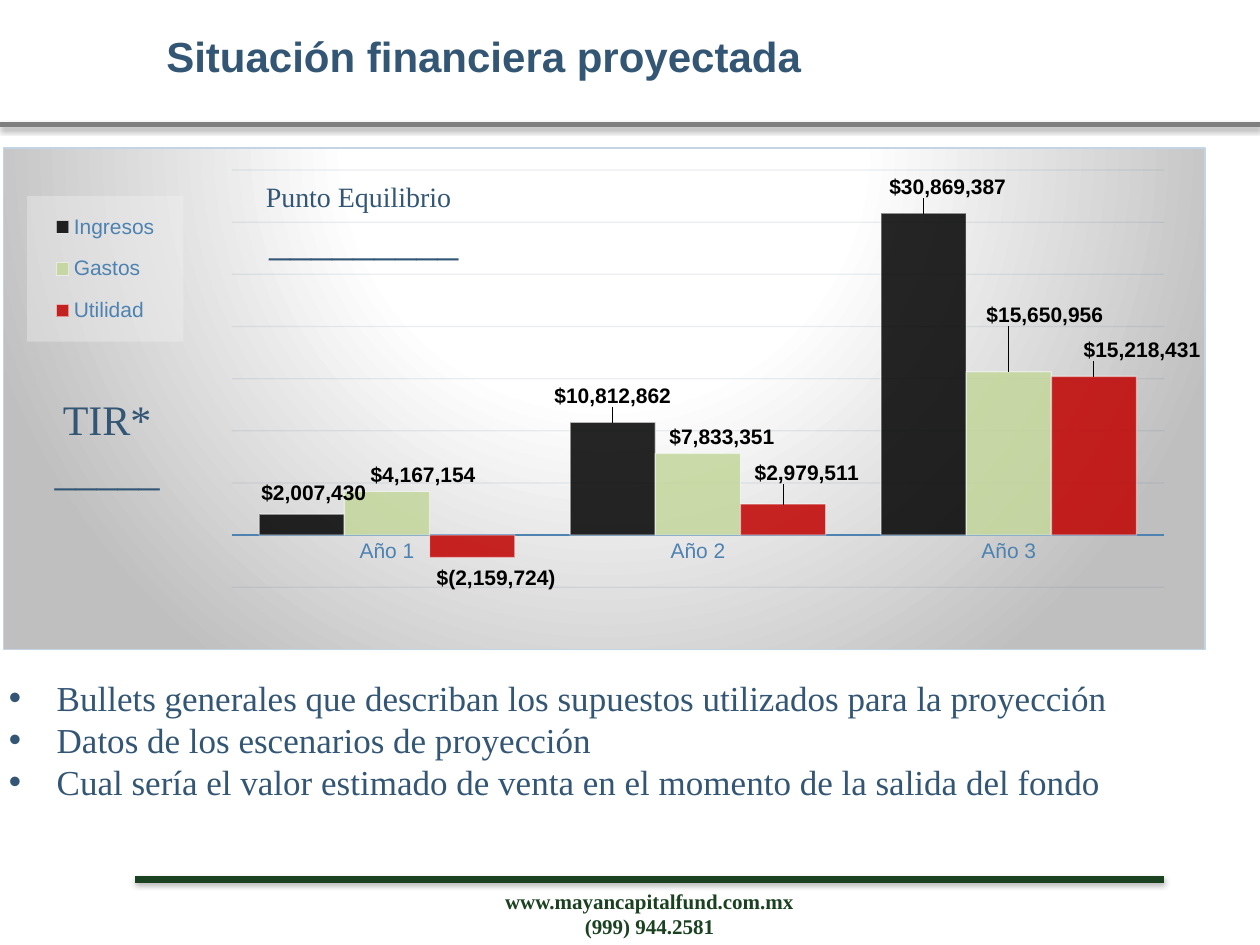
from pptx import Presentation
from pptx.chart.data import CategoryChartData
from pptx.dml.color import RGBColor
from pptx.enum.chart import XL_CHART_TYPE, XL_LABEL_POSITION, XL_LEGEND_POSITION, XL_TICK_MARK
from pptx.enum.shapes import MSO_CONNECTOR
from pptx.enum.text import MSO_ANCHOR, PP_ALIGN
from pptx.oxml import parse_xml
from pptx.oxml.ns import nsdecls
from pptx.util import Inches, Pt

THEME = {
    "ink": "335675", "axis": "4D82B1", "grid": "385F81", "border": "C3D5E5",
    "rule": "7F7F7F", "green": "1A4221", "black": "000000", "white": "FFFFFF",
    "sans": "Arial", "serif": "Times New Roman",
    "large": 24, "body": 20, "note": 16, "small": 12,
}
MONEY = '"$"#,##0;"$"\\(#,##0\\)'

deck = Presentation()
deck.slide_width, deck.slide_height = Inches(10), Inches(7.5)
column, row = deck.slide_width / 100, deck.slide_height / 75
page = deck.slides.add_slide(deck.slide_layouts[1])


def grid(left, top, width, height):
    return [int(left * column), int(top * row), int(width * column), int(height * row)]


def style(font, size, color, face, bold=False):
    font.size, font.bold, font.name = Pt(THEME[size]), bold, THEME[face]
    font.color.rgb = RGBColor.from_string(THEME[color])


for left, right, height, color, weight, opacity in [
    (0, 100, 9.9, "rule", 3, 38),
    (10.7, 92.4, 69.8, "green", 3.5, 35),
]:
    x, y, end, _ = grid(left, height, right, 0)
    rule = page.shapes.add_connector(MSO_CONNECTOR.STRAIGHT, x, y, end, y)
    rule.line.color.rgb = RGBColor.from_string(THEME[color])
    rule.line.width = Pt(weight)
    rule._element.spPr.append(parse_xml(
        f'<a:effectLst {nsdecls("a")}><a:outerShdw blurRad="{Pt(3.1)}" dist="{Pt(1.7)}" '
        f'dir="5400000" rotWithShape="0"><a:srgbClr val="{THEME["black"]}">'
        f'<a:alpha val="{opacity * 1000}"/></a:srgbClr></a:outerShdw></a:effectLst>'))

series_table = [
    ("Ingresos", "000000", (2007430, 10812862, 30869387),
     [(0.01, -0.01), (0, -0.02), (0.02, -0.02)]),
    ("Gastos", "C3D69B", (4167154, 7833351, 15650956),
     [(0.03, 0), (0.02, 0), (0.03, -0.08)]),
    ("Utilidad", "C00000", (-2159724, 2979511, 15218431),
     [(0.02, 0.01), (0.02, -0.03), (0.04, -0.02)]),
]
data = CategoryChartData(number_format=MONEY)
data.categories = ["Año 1", "Año 2", "Año 3"]
for name, _, values, _ in series_table:
    data.add_series(name, values)
chart = page.shapes.add_chart(
    XL_CHART_TYPE.COLUMN_CLUSTERED, *grid(0.2, 11.7, 95.5, 39.9), data).chart
chart.has_title = False
style(chart.font, "small", "ink", "sans")

plot = chart.plots[0]
plot.gap_width, plot.overlap, plot.vary_by_categories = 65, 0, False
for series, (_, color, _, offsets) in zip(plot.series, series_table):
    series.invert_if_negative = False
    series.format.fill.solid()
    series.format.fill.fore_color.rgb = RGBColor.from_string(color)
    series.format.line.color.rgb = RGBColor.from_string(THEME["white"])
    series.format.line.width = Pt(0.75)
    for tint, opacity in zip(series._element.xpath("c:spPr//a:srgbClr"), (85, 50)):
        tint.append(parse_xml(f'<a:alpha {nsdecls("a")} val="{opacity * 1000}"/>'))
    labels = series.data_labels
    labels.show_value = True
    labels.number_format, labels.number_format_is_linked = MONEY, False
    labels.position = XL_LABEL_POSITION.OUTSIDE_END
    style(labels.font, "small", "black", "sans", True)
    for index, (across, down) in enumerate(offsets):
        label = series.points[index].data_label
        label.position = XL_LABEL_POSITION.OUTSIDE_END
        style(label.font, "small", "black", "sans", True)
        anchor = series._element.xpath(f"c:dLbls/c:dLbl/c:idx[@val='{index}']")[0]
        number = parse_xml(f'<c:numFmt {nsdecls("c")} sourceLinked="0"/>')
        number.set("formatCode", MONEY)
        anchor.addnext(number)
        anchor.addnext(parse_xml(
            f'<c:layout {nsdecls("c")}><c:manualLayout><c:x val="{across}"/>'
            f'<c:y val="{down}"/></c:manualLayout></c:layout>'))

years = chart.category_axis
years.major_tick_mark = XL_TICK_MARK.NONE
years.format.line.color.rgb = RGBColor.from_string(THEME["axis"])
years.format.line.width = Pt(1.5)
style(years.tick_labels.font, "small", "axis", "sans")

amounts = chart.value_axis
amounts.minimum_scale, amounts.maximum_scale, amounts.major_unit = -5e6, 35e6, 5e6
amounts.has_major_gridlines = True
lines = amounts.major_gridlines.format.line
lines.color.rgb = RGBColor.from_string(THEME["grid"])
lines.width = Pt(0.75)
for tint in amounts._element.xpath("c:majorGridlines//a:srgbClr"):
    tint.append(parse_xml(f'<a:alpha {nsdecls("a")} val="10000"/>'))
amounts.visible = False

chart.has_legend = True
legend = chart.legend
legend.position, legend.include_in_layout = XL_LEGEND_POSITION.BOTTOM, False
style(legend.font, "small", "axis", "sans")
legend._element.xpath("c:txPr")[0].addprevious(parse_xml(
    f'<c:spPr {nsdecls("c", "a")}><a:solidFill><a:srgbClr val="F2F2F2">'
    '<a:alpha val="39000"/></a:srgbClr></a:solidFill></c:spPr>'))

for part, inner, frame in [
    (plot._element.getparent(), '<c:layoutTarget val="inner"/>', (0.19, 0.044, 0.776, 0.832)),
    (legend._element, "", (0.02, 0.096, 0.13, 0.29)),
]:
    for old in part.xpath("c:layout"):
        part.remove(old)
    sizes = "".join(f'<c:{key} val="{share}"/>' for key, share in zip("xywh", frame))
    layout = parse_xml(
        f'<c:layout {nsdecls("c")}><c:manualLayout>{inner}<c:xMode val="edge"/>'
        f'<c:yMode val="edge"/>{sizes}</c:manualLayout></c:layout>')
    if inner:
        part.insert(0, layout)
    else:
        part.xpath("c:legendPos")[0].addnext(layout)

stops = "".join(f'<a:gs pos="{place}000"><a:srgbClr val="{color}"/></a:gs>'
                for place, color in [(0, "FFFFFF"), (39, "FFFFFF"), (100, "BFBFBF")])
chart._chartSpace.xpath("c:chart")[0].addnext(parse_xml(
    f'<c:spPr {nsdecls("c", "a")}><a:gradFill><a:gsLst>{stops}</a:gsLst><a:path path="circle">'
    '<a:fillToRect l="50000" t="-80000" r="50000" b="180000"/></a:path></a:gradFill>'
    f'<a:ln w="{Pt(0.75)}"><a:solidFill><a:srgbClr val="{THEME["border"]}"/></a:solidFill>'
    '</a:ln></c:spPr>'))

title = page.shapes.title
title.left, title.top, title.width, title.height = grid(12.2, 1.9, 66.4, 5)
title.text_frame.text = "Situación financiera proyectada"
title.text_frame.vertical_anchor = MSO_ANCHOR.MIDDLE
title.text_frame.paragraphs[0].alignment = PP_ALIGN.LEFT
style(title.text_frame.paragraphs[0].runs[0].font, "large", "ink", "sans", True)

body = page.placeholders[1]
body.left, body.top, body.width, body.height = grid(-0.3, 53.2, 90.5, 11.1)
body.text_frame.text = "\n".join([
    "Bullets generales que describan los supuestos utilizados para la proyección",
    "Datos de los escenarios de proyección",
    "Cual sería el valor estimado de venta en el momento de la salida del fondo",
])
for paragraph in body.text_frame.paragraphs:
    properties = paragraph._p.get_or_add_pPr()
    properties.set("marL", str(Inches(0.38)))
    properties.set("indent", str(-Inches(0.38)))
    properties.append(parse_xml(f'<a:buFont {nsdecls("a")} typeface="Arial"/>'))
    properties.append(parse_xml(f'<a:buChar {nsdecls("a")} char="•"/>'))
    paragraph.space_before = Pt(0)
    style(paragraph.runs[0].font, "body", "ink", "serif")

for place, wrap, color, bold, content in [
    ((18.5, 13.8, 19.9, 7.7), True, "ink", False,
     [("Punto Equilibrio", "note"), (" _________", "large")]),
    ((3.3, 30.7, 10.4, 9.1), False, "ink", False, [("TIR*", "large"), ("_____", "large")]),
    ((39, 70, 25.1, 5), False, "green", True,
     [("www.mayancapitalfund.com.mx", "small"), ("(999) 944.2581", "small")]),
]:
    box = page.shapes.add_textbox(*grid(*place))
    box.text_frame.word_wrap = wrap
    box.text_frame.text = "\n".join(text for text, _ in content)
    for paragraph, (_, size) in zip(box.text_frame.paragraphs, content):
        paragraph.alignment = PP_ALIGN.CENTER
        style(paragraph.runs[0].font, size, color, "serif", bold)

deck.save("out.pptx")
